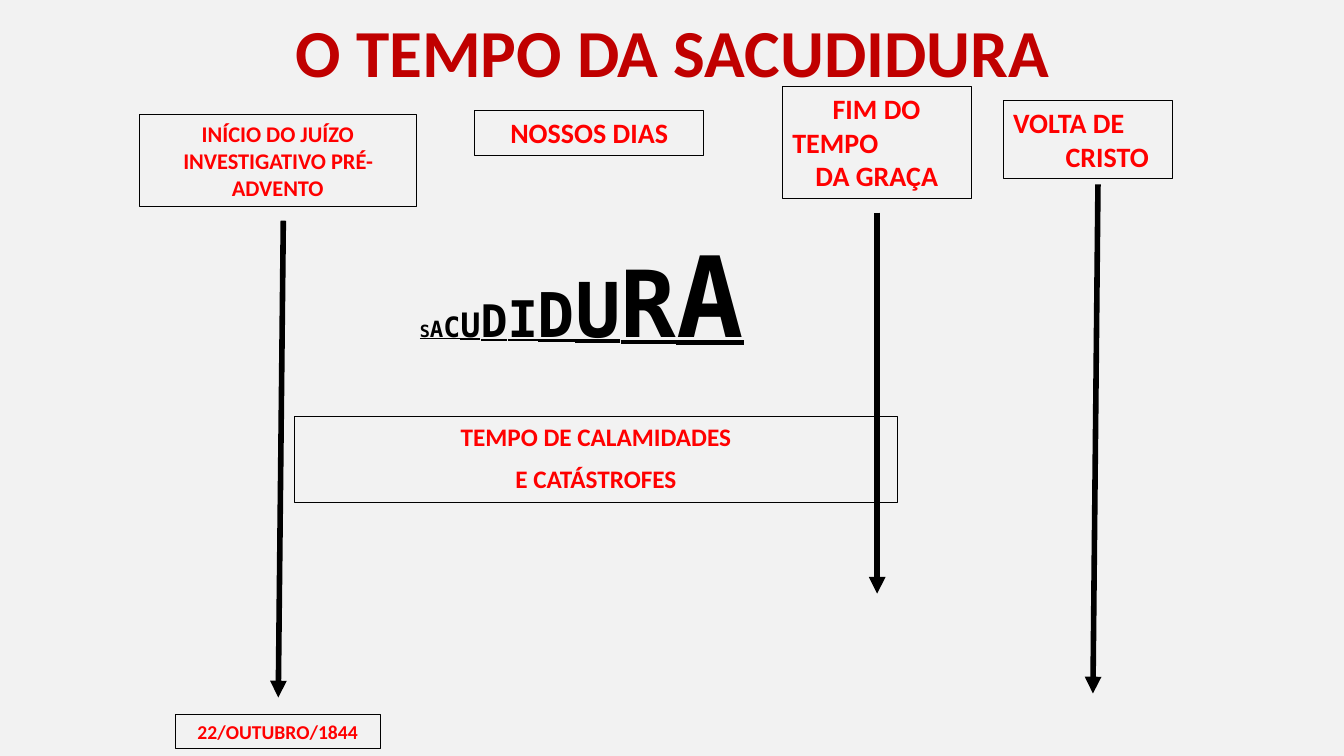
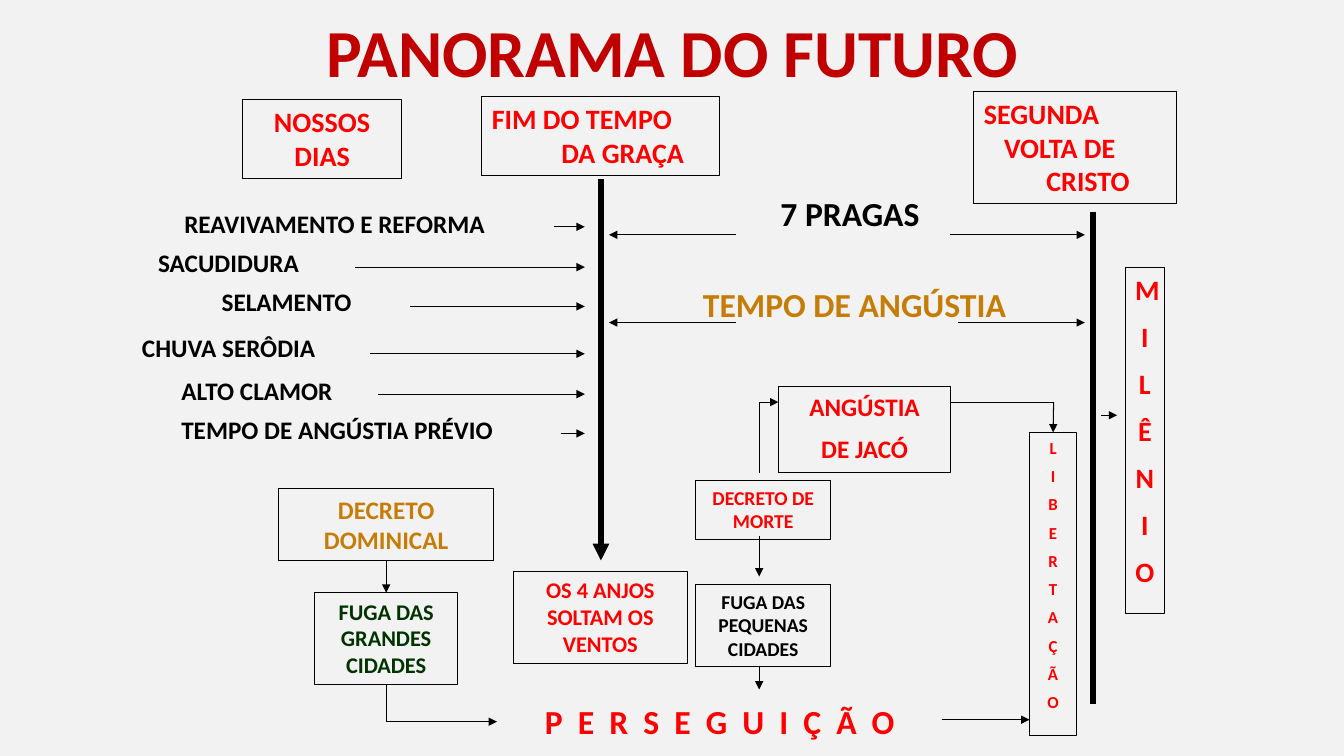
from dataclasses import dataclass
from typing import Any
from lxml import etree
from pptx import Presentation
from pptx.dml.color import RGBColor
from pptx.enum.shapes import MSO_CONNECTOR, MSO_SHAPE
from pptx.enum.text import MSO_ANCHOR, PP_ALIGN
from pptx.oxml.ns import qn
from pptx.util import Inches, Pt

RECT = MSO_SHAPE.RECTANGLE
LINE = MSO_CONNECTOR.STRAIGHT
TOP = MSO_ANCHOR.TOP
LEFT, MID = PP_ALIGN.LEFT, PP_ALIGN.CENTER
FONT = "Calibri"
MONO = "DejaVu Sans Mono"
BACK, TITLE = "F2F2F2", "C00000"
RED, BLACK, GOLD, GREEN = "FF0000", "000000", "C67D08", "003300"
THIN, THICK = 0.75, 4


def color(code):
    return RGBColor.from_string(code)


def style(run, size, code, font=FONT):
    run.font.size = Pt(size)
    run.font.name = font
    run.font.bold = True
    run.font.color.rgb = color(code)


def letter(shape, text, size, code, align):
    frame = shape.text_frame
    frame.word_wrap = True
    frame.vertical_anchor = TOP
    frame.text = text
    for i, para in enumerate(frame.paragraphs):
        para.alignment = align
        if i:
            para.space_before = Pt(round(size * 0.48, 1))
        for run in para.runs:
            style(run, size, code)
    return shape


@dataclass
class Area:
    slide: Any
    x: float
    y: float
    w: float = 0
    h: float = 0

    def place(self, x, y, w, h):
        return [Inches(v) for v in (self.x + x, self.y + y, w, h)]

    def label(self, x, y, w, h, text, size, code=BLACK, align=MID):
        shape = self.slide.shapes.add_textbox(*self.place(x, y, w, h))
        return letter(shape, text, size, code, align)

    def box(self, x, y, w, h, text, size, code=RED, align=MID):
        shape = self.slide.shapes.add_shape(RECT, *self.place(x, y, w, h))
        shape.shadow.inherit = False
        shape.fill.background()
        shape.line.color.rgb = color(BLACK)
        shape.line.width = Pt(THIN)
        return letter(shape, text, size, code, align)

    def steps(self, x, y, w, h, rows):
        text = "\n".join(row for row, _ in rows)
        shape = self.box(x, y, w, h, text, 20, RED, LEFT)
        for para, (_, gap) in zip(shape.text_frame.paragraphs, rows):
            para.space_before = Pt(0)
            props = para._p.get_or_add_pPr()
            props.set("marL", str(Inches(gap)))
            props.set("indent", "0")

    def line(self, x1, y1, x2, y2, width=THIN, head=True, start=None, end=None):
        spots = self.place(x1, y1, 0, 0)[:2] + self.place(x2, y2, 0, 0)[:2]
        link = self.slide.shapes.add_connector(LINE, *spots)
        link.line.color.rgb = color(BLACK)
        link.line.width = Pt(width)
        if head:
            tail = etree.SubElement(link.line._get_or_add_ln(), qn("a:tailEnd"))
            tail.set("type", "triangle")
        etree.SubElement(link._element.spPr, qn("a:effectLst"))
        if start:
            link.begin_connect(*start)
        if end:
            link.end_connect(*end)


def title(slide, text):
    Area(slide, 1.67, 0.05).label(0, 0, 10, 0.91, text, 48, TITLE)


def growth(area):
    shape = area.label(0, 0, area.w, area.h, "", 12)
    para = shape.text_frame.paragraphs[0]
    sizes = (12, 16, 20, 24, 32, 36, 44, 54, 66, 80)
    for char, size in zip("SACUDIDURA", sizes):
        run = para.add_run()
        run.text = char
        style(run, size, BLACK, MONO)
        run.font.underline = True


def start(area):
    area.box(0, 0, area.w, 0.91, "INÍCIO DO JUÍZO INVESTIGATIVO PRÉ-ADVENTO", 16)
    area.line(1.43, 1.05, 1.38, 5.78, THICK)
    area.box(0.36, 5.95, 2.03, 0.34, "22/OUTUBRO/1844", 14)


def finish(area):
    rows = [("FIM DO", 0.4), ("TEMPO", 0), ("DA GRAÇA", 0.23)]
    area.steps(0, 0, area.w, 1.11, rows)
    area.line(0.94, 1.25, 0.94, 5.03, THICK)


def advent(area):
    area.steps(0, 0, area.w, 0.77, [("VOLTA DE", 0), ("CRISTO", 0.52)])
    area.line(0.94, 0.83, 0.89, 5.88, THICK)


def marks(area):
    area.box(0, 0.08, 1.57, 0.78, "NOSSOS DIAS", 20)
    area.steps(2.37, 0.05, 2.36, 0.78, [("FIM DO TEMPO", 0), ("DA GRAÇA", 0.69)])
    rows = [("SEGUNDA", 0), ("VOLTA DE", 0.2), ("CRISTO", 0.62)]
    area.steps(7.25, 0, 2.01, 1.11, rows)
    area.line(3.55, 0.87, 3.55, 4.65, THICK)
    area.line(8.43, 1.19, 8.43, 6.07, THICK, False)


def signs(area):
    rows = [
        ("REAVIVAMENTO E REFORMA", 0.42, 0, 4.18, 0.23),
        ("SACUDIDURA", 0.16, 0.38, 2.21, 0.63),
        ("SELAMENTO", 0.79, 0.77, 2.76, 1.02),
        ("CHUVA SERÔDIA", 0, 1.23, 2.36, 1.49),
        ("ALTO CLAMOR", 0.39, 1.65, 2.44, 1.89),
        ("TEMPO DE ANGÚSTIA PRÉVIO", 0.39, 2.04, 4.25, 2.28),
    ]
    for text, x, y, tip, level in rows:
        area.label(x, y, 3.7, 0.4, text, 18, BLACK, LEFT)
        area.line(tip, level, area.w, level)


def span(area, text, code, x, y, w, right):
    area.label(x, y, w, 0.51, text, 24, code)
    area.line(1.26, area.h, 0, area.h)
    area.line(right, area.h, area.w, area.h)


def sunday(area):
    law = area.box(0, 0, 2.14, 0.71, "DECRETO DOMINICAL", 18, GOLD)
    flight = area.box(0.36, 1.03, 1.42, 0.91, "FUGA DAS GRANDES CIDADES", 16, GREEN)
    area.line(1.07, 0.71, 1.07, 1.03, start=(law, 2), end=(flight, 0))
    area.line(1.07, 1.94, 1.07, 2.31, head=False, start=(flight, 2))
    area.line(1.07, 2.31, 2.17, 2.31)


def death(area):
    area.box(0, 0.94, area.w, 0.58, "DECRETO DE MORTE", 14)
    area.line(0.63, 1.49, 0.63, 1.89)
    area.box(0, 1.97, area.w, 0.81, "FUGA DAS PEQUENAS CIDADES", 14, BLACK)
    area.line(0.63, 2.78, 0.63, 3.01)
    area.line(0.63, 0.86, 0.63, 0.16, head=False)
    area.line(0.63, 0.16, 0.82, 0.16)
    area.box(0.82, 0, 1.71, 0.86, "ANGÚSTIA\nDE JACÓ", 18)


def rescue(area):
    tower = area.box(0.79, 0.3, 0.47, 3.01, "\n".join("LIBERTAÇÃO"), 12)
    area.line(0, 0, 1.03, 0, head=False)
    area.line(1.03, 0, 1.03, 0.3, end=(tower, 0))


def reign(area):
    area.box(0.24, 0, 0.39, area.h, "\n".join("MILÊNIO"), 20)
    area.line(0, 1.47, 0.16, 1.47)


def trial(area):
    shape = area.label(0, 0, 5.04, 0.5, " ".join("PERSEGUIÇÃO"), 24, RED)
    for run in shape.text_frame.paragraphs[0].runs:
        run._r.get_or_add_rPr().set("spc", "270")
    area.line(4.72, 0.24, area.w, 0.24)


def shaking(slide):
    title(slide, "O TEMPO DA SACUDIDURA")
    Area(slide, 4.71, 1.1).box(0, 0, 2.27, 0.44, "NOSSOS DIAS", 20)
    finish(Area(slide, 7.76, 0.86, 1.88))
    advent(Area(slide, 9.95, 1, 1.68))
    growth(Area(slide, 2.92, 2.19, 5.7, 1.45))
    start(Area(slide, 1.38, 1.14, 2.75))
    woes = "TEMPO DE CALAMIDADES\nE CATÁSTROFES"
    Area(slide, 2.92, 4.13).box(0, 0, 5.98, 0.86, woes, 18)


def future(slide):
    title(slide, "PANORAMA DO FUTURO")
    marks(Area(slide, 2.41, 0.91))
    signs(Area(slide, 1.31, 2.02, 4.49))
    span(Area(slide, 6.04, 1.86, 4.72, 0.47), "7 PRAGAS", BLACK, 1.57, 0, 1.64, 3.38)
    span(Area(slide, 6.04, 2.77, 4.72, 0.43), "TEMPO DE ANGÚSTIA", GOLD, 0.75, 0, 3.37, 3.46)
    sunday(Area(slide, 2.76, 4.85))
    Area(slide, 5.09, 5.67).box(0, 0, 1.73, 0.91, "OS 4 ANJOS SOLTAM OS VENTOS", 16)
    death(Area(slide, 6.9, 3.83, 1.34))
    rescue(Area(slide, 9.42, 3.99))
    reign(Area(slide, 10.92, 2.65, 0.63, 3.44))
    trial(Area(slide, 4.62, 6.9, 5.59))


def main():
    deck = Presentation()
    deck.slide_width, deck.slide_height = Inches(13.33), Inches(7.5)
    fill = deck.slide_master.background.fill
    fill.solid()
    fill.fore_color.rgb = color(BACK)
    for build in (shaking, future):
        build(deck.slides.add_slide(deck.slide_layouts[6]))
    deck.save("out.pptx")


if __name__ == "__main__":
    main()
